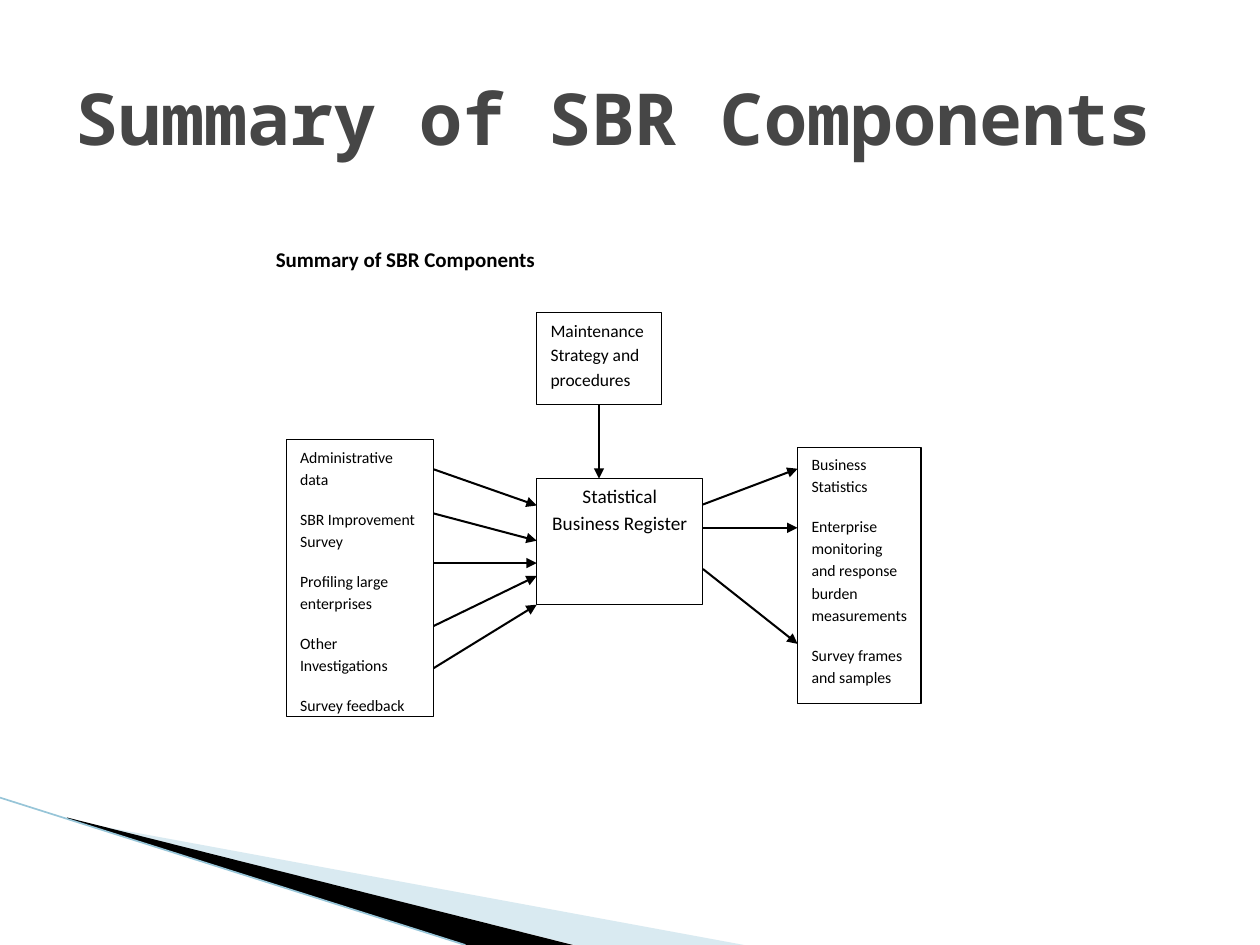
import pptx
import pptx.util
import pptx.dml.color
import pptx.enum.shapes
import pptx.enum.text
import pptx.oxml.ns
import pptx.oxml.xmlchemy

THEME = {
    "title_font": "Noto Sans Mono", "body_font": "Calibri",
    "title": "464646", "ink": "000000", "paper": "FFFFFF",
    "wing": "A0CBDC", "edge": "97C5D8",
    "title_size": 41, "heading_size": 12, "register_size": 11,
    "maintenance_size": 10, "list_size": 9,
    "box_line": 0.75, "arrow_line": 1.15, "edge_line": 0.95,
}

TITLE = "Summary of SBR Components"

BOXES = {
    "sources": {
        "place": (5.77, 8.86, 2.97, 5.59), "top": 0.1, "pitch": 12.7,
        "size": "list_size",
        "items": [["Administrative", "data"], ["SBR Improvement", "Survey"],
                  ["Profiling large", "enterprises"],
                  ["Other", "Investigations"], ["Survey feedback"]],
    },
    "maintenance": {
        "place": (10.82, 6.3, 2.51, 1.85), "top": 0.08, "pitch": 14,
        "size": "maintenance_size",
        "items": [["Maintenance", "Strategy and", "procedures"]],
    },
    "outputs": {
        "place": (16.08, 9.02, 2.49, 5.16), "top": 0.08, "pitch": 12.7,
        "size": "list_size",
        "items": [["Business", "Statistics"],
                  ["Enterprise", "monitoring", "and response", "burden",
                   "measurements"],
                  ["Survey frames", "and samples"]],
    },
    "register": {
        "place": (10.82, 9.65, 3.35, 2.54), "top": 0.03, "pitch": 15.6,
        "size": "register_size", "centered": True,
        "items": [["Statistical", "Business Register"]],
    },
}

SOURCE_ARROWS = [(9.46, 10.19), (10.35, 10.9), (11.35, 11.35),
                 (12.62, 11.61), (13.47, 12.19)]
OUTPUT_ARROWS = [(10.17, 9.45), (10.64, 10.64), (11.47, 12.98)]

WINGS = [
    ("wing", 40, [(1.4, 16.54), (15, 19.05), (11.58, 19.05), (1.4, 16.51)]),
    ("ink", 100, [(1.35, 16.48), (11.55, 19.05), (9.4, 19.05), (1.37, 16.51)]),
]
WING_EDGE = ((0, 16.08), (9.38, 19.05))


def lengths(values):
    return [pptx.util.Cm(value) for value in values]


def color(name):
    return pptx.dml.color.RGBColor.from_string(THEME[name])


def add_element(parent, tag, **attributes):
    element = pptx.oxml.xmlchemy.OxmlElement(tag)
    for name, value in attributes.items():
        element.set(name, value)
    parent.append(element)


def write_text(frame, text, size, font="body_font", ink="ink", bold=False,
               centered=False, pitch=None, gap=0, insets=(0, 0, 0, 0),
               anchor=pptx.enum.text.MSO_ANCHOR.TOP):
    frame.word_wrap = True
    frame.auto_size = pptx.enum.text.MSO_AUTO_SIZE.NONE
    frame.vertical_anchor = anchor
    (frame.margin_left, frame.margin_top,
     frame.margin_right, frame.margin_bottom) = lengths(insets)
    frame.text = text
    alignment = pptx.enum.text.PP_ALIGN
    for index, paragraph in enumerate(frame.paragraphs):
        paragraph.alignment = alignment.CENTER if centered else alignment.LEFT
        paragraph.space_before = pptx.util.Pt(gap if index else 0)
        if pitch:
            paragraph.line_spacing = pptx.util.Pt(pitch)
        for run in paragraph.runs:
            run.font.name = THEME[font]
            run.font.size = pptx.util.Pt(THEME[size])
            run.font.bold = bold
            run.font.color.rgb = color(ink)


def add_wing(slide, fill, opacity, points):
    corners = [lengths(point) for point in points]
    builder = slide.shapes.build_freeform(*corners[0])
    builder.add_line_segments(corners[1:], close=True)
    shape = builder.convert_to_shape()
    shape.shadow.inherit = False
    shape.fill.solid()
    shape.fill.fore_color.rgb = color(fill)
    shape.line.fill.background()
    if opacity < 100:
        tone = next(shape._element.spPr.iter(pptx.oxml.ns.qn("a:srgbClr")))
        add_element(tone, "a:alpha", val=str(opacity * 1000))


def add_line(slide, start, end, ink="ink", width="arrow_line", arrow=True):
    connector = slide.shapes.add_connector(
        pptx.enum.shapes.MSO_CONNECTOR.STRAIGHT, *lengths(start + end))
    connector.line.color.rgb = color(ink)
    connector.line.width = pptx.util.Pt(THEME[width])
    properties = connector._element.spPr
    if arrow:
        add_element(properties.get_or_add_ln(), "a:tailEnd", type="triangle")
    add_element(properties, "a:effectLst")


def add_box(slide, box):
    shape = slide.shapes.add_shape(
        pptx.enum.shapes.MSO_SHAPE.RECTANGLE, *lengths(box["place"]))
    shape.shadow.inherit = False
    shape.fill.solid()
    shape.fill.fore_color.rgb = color("paper")
    shape.line.color.rgb = color("ink")
    shape.line.width = pptx.util.Pt(THEME["box_line"])
    centered = box.get("centered", False)
    text = "\n".join("\v".join(lines) for lines in box["items"])
    write_text(shape.text_frame, text, box["size"], centered=centered,
               pitch=box["pitch"], gap=10,
               insets=(0 if centered else 0.28, box["top"], 0, 0))


def left(name):
    return BOXES[name]["place"][0]


def right(name):
    return left(name) + BOXES[name]["place"][2]


def main():
    presentation = pptx.Presentation()
    presentation.slide_width, presentation.slide_height = lengths((25.4, 19.05))
    slide = presentation.slides.add_slide(presentation.slide_layouts[5])

    for wing in WINGS:
        add_wing(slide, *wing)
    add_line(slide, *WING_EDGE, ink="edge", width="edge_line", arrow=False)

    title = slide.shapes.title
    title.left, title.top, title.width, title.height = lengths(
        (1.27, 0.76, 22.86, 3.18))
    write_text(title.text_frame, TITLE, "title_size", font="title_font",
               ink="title", bold=True, insets=(0.25, 0.13, 0.25, 0.13),
               anchor=pptx.enum.text.MSO_ANCHOR.MIDDLE)
    heading = slide.shapes.add_textbox(*lengths((5.56, 4.98, 5.59, 0.64)))
    write_text(heading.text_frame, TITLE, "heading_size", bold=True)

    for box in BOXES.values():
        add_box(slide, box)

    for start, end in SOURCE_ARROWS:
        add_line(slide, (right("sources"), start), (left("register"), end))
    for start, end in OUTPUT_ARROWS:
        add_line(slide, (right("register"), start), (left("outputs"), end))
    x, y, width, height = BOXES["maintenance"]["place"]
    center = x + width / 2
    add_line(slide, (center, y + height),
             (center, BOXES["register"]["place"][1]))

    presentation.save("out.pptx")


if __name__ == "__main__":
    main()
